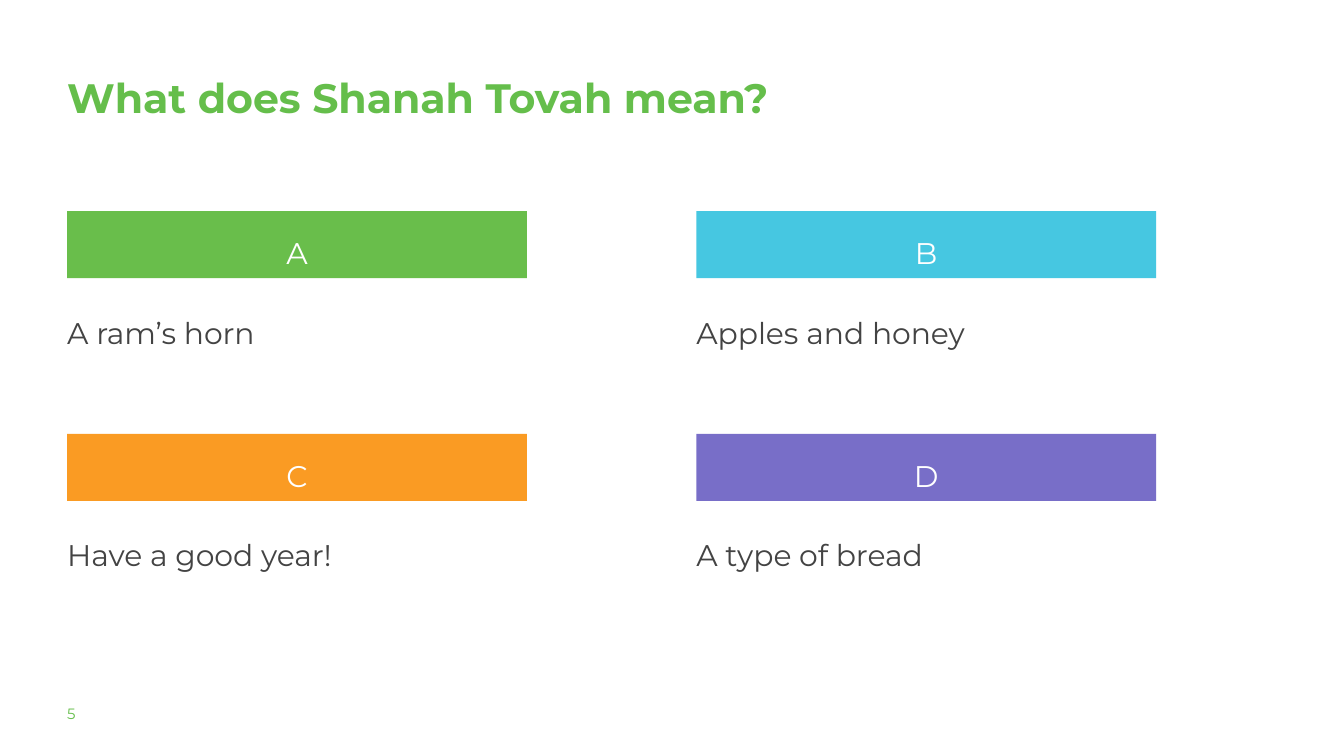
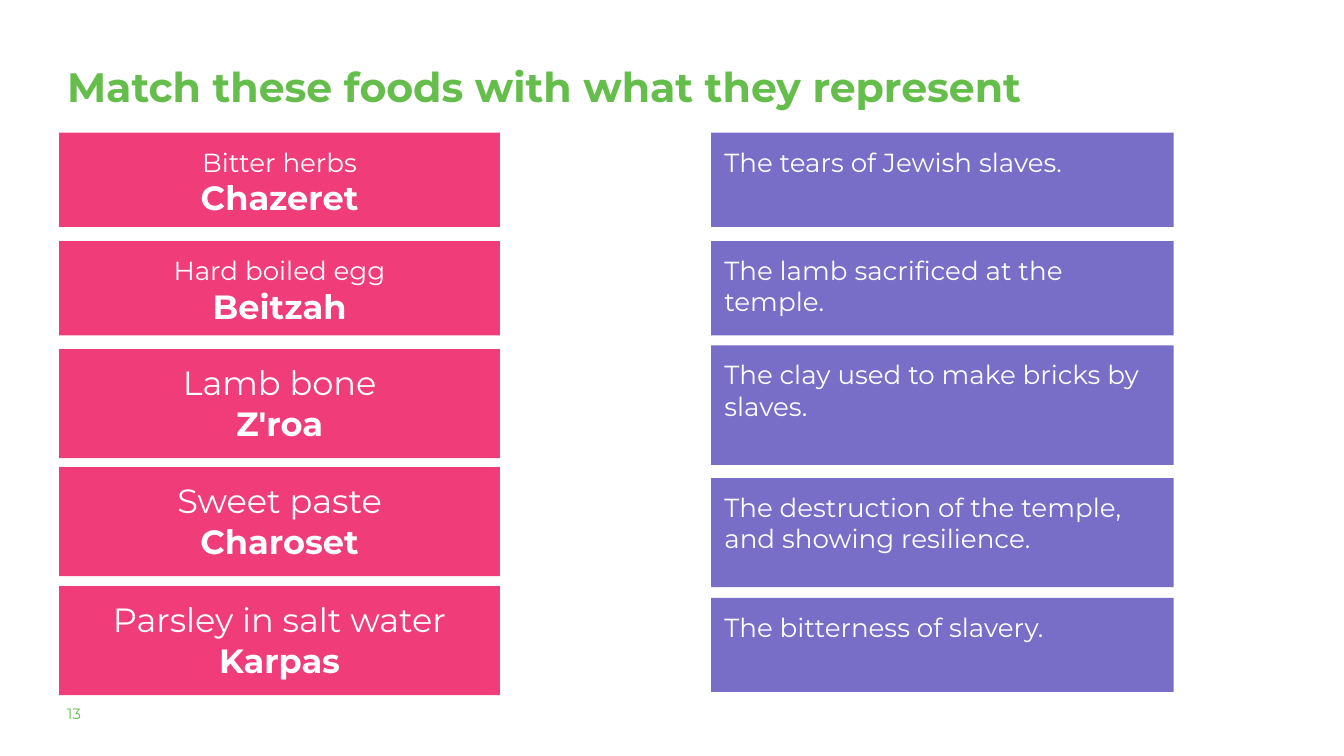
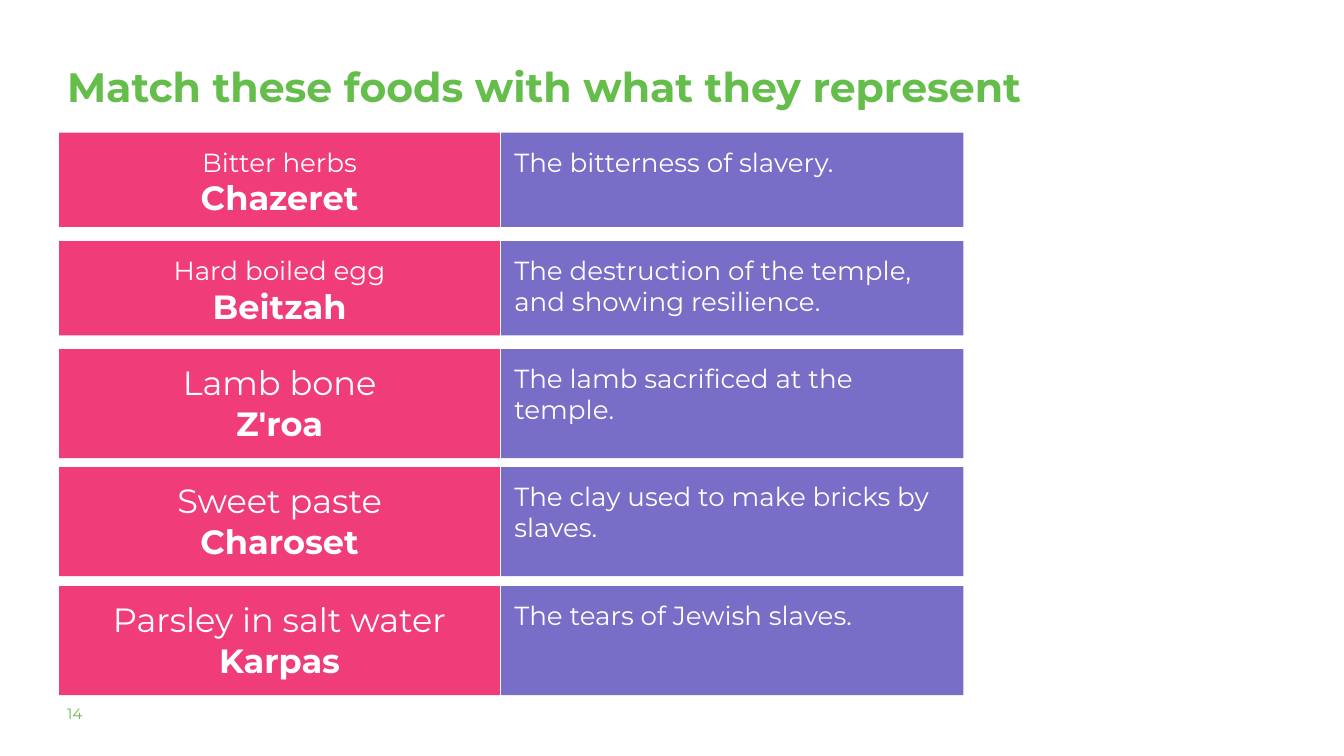
import pptx
import pptx.dml.color
import pptx.enum.shapes
import pptx.enum.text
import pptx.util
from dataclasses import dataclass

Cm = pptx.util.Cm
LEFT = pptx.enum.text.PP_ALIGN.LEFT
CENTER = pptx.enum.text.PP_ALIGN.CENTER


@dataclass(frozen=True)
class Theme:
    font: str = "Montserrat"
    heading: str = "65BE4B"
    body: str = "434343"
    white: str = "FFFFFF"
    green: str = "69BE4B"
    cyan: str = "46C7E1"
    orange: str = "FA9B23"
    purple: str = "786EC8"
    pink: str = "F03C78"
    title_size: int = 22
    food_size: int = 18
    answer_size: int = 16
    small_size: int = 14
    number_size: int = 8
    margin: float = 1.27
    inset: float = 0.25


class SlideBuilder:
    def __init__(self, theme):
        self.theme = theme
        self.deck = pptx.Presentation()
        self.deck.slide_width = Cm(25.4)
        self.deck.slide_height = Cm(14.29)
        self.slide = None

    def new_slide(self, title, title_top, number):
        theme = self.theme
        self.slide = self.deck.slides.add_slide(self.deck.slide_layouts[6])
        self.text((theme.margin, title_top, 22.86, 2.26),
                  [(title, theme.title_size, True)], theme.heading, line_spacing=1.15)
        self.text((theme.margin, 13.31, 2.01, 0.51),
                  [(number, theme.number_size, False)], theme.heading)

    def text(self, place, lines, color, **layout):
        box = self.slide.shapes.add_textbox(*map(Cm, place))
        self.fill_text(box, lines, color, 0, layout)

    def block(self, place, lines, fill, **layout):
        """Add a filled rectangle with white text."""
        box = self.slide.shapes.add_shape(
            pptx.enum.shapes.MSO_SHAPE.RECTANGLE, *map(Cm, place))
        box.shadow.inherit = False
        box.fill.solid()
        box.fill.fore_color.rgb = pptx.dml.color.RGBColor.from_string(fill)
        box.line.fill.background()
        self.fill_text(box, lines, self.theme.white, self.theme.inset, layout)

    def fill_text(self, box, lines, color, inset, layout):
        """Fill a shape with lines of (words, size, bold), one paragraph each."""
        frame = box.text_frame
        frame_format = {"word_wrap": True,
                        "vertical_anchor": pptx.enum.text.MSO_ANCHOR.TOP}
        for side in ("left", "top", "right", "bottom"):
            frame_format[f"margin_{side}"] = Cm(inset)
        set_format(frame, frame_format)
        for index, (words, size, bold) in enumerate(lines):
            para = frame.add_paragraph() if index else frame.paragraphs[0]
            set_format(para, {"alignment": LEFT, **layout})
            span = para.add_run()
            span.text = words
            set_format(span.font, {"name": self.theme.font,
                                   "size": pptx.util.Pt(size), "bold": bold})
            span.font.color.rgb = pptx.dml.color.RGBColor.from_string(color)


def set_format(target, values):
    for name, value in values.items():
        setattr(target, name, value)


THEME = Theme()

ANSWERS = [
    ("A", "A ram’s horn", THEME.green),
    ("B", "Apples and honey", THEME.cyan),
    ("C", "Have a good year!", THEME.orange),
    ("D", "A type of bread", THEME.purple),
]

# Everyday name, Hebrew name, size of the everyday name
FOODS = [
    ("Bitter herbs", "Chazeret", THEME.small_size),
    ("Hard boiled egg", "Beitzah", THEME.small_size),
    ("Lamb bone", "Z'roa", THEME.food_size),
    ("Sweet paste", "Charoset", THEME.food_size),
    ("Parsley in salt water", "Karpas", THEME.food_size),
]

TEARS = "The tears of Jewish slaves."
LAMB = "The lamb sacrificed at the temple."
CLAY = "The clay used to make bricks by slaves."
TEMPLE = "The destruction of the temple, and showing resilience."
BITTERNESS = "The bitterness of slavery."

# Top and height of each row
FOOD_ROWS = [(2.51, 1.78), (4.56, 1.78), (6.6, 2.06), (8.83, 2.06), (11.08, 2.06)]
SHUFFLED_ROWS = [(2.51, 1.78), (4.56, 1.78), (6.53, 2.26), (9.04, 2.06), (11.3, 1.78)]


def build_quiz(builder):
    theme = builder.theme
    builder.new_slide("What does Shanah Tovah mean?", 1.24, "5")
    for index, (letter, answer, color) in enumerate(ANSWERS):
        row, column = divmod(index, 2)
        left = theme.margin + column * 11.89
        top = 3.99 + row * 4.21
        builder.block((left, top, 8.69, 1.27), [(letter, theme.answer_size, False)],
                      color, alignment=CENTER, line_spacing=1.3)
        builder.text((left, top + 1.75, 10.97, 1.75),
                     [(answer, theme.answer_size, False)], theme.body,
                     line_spacing=1.3, space_after=pptx.util.Pt(10))


def build_match(builder, number, meanings, meaning_left, meaning_rows):
    theme = builder.theme
    builder.new_slide("Match these foods with what they represent", 1.02, number)
    for (name, hebrew, size), (top, height) in zip(FOODS, FOOD_ROWS):
        builder.block((1.12, top, 8.33, height),
                      [(name, size, False), (hebrew, theme.food_size, True)],
                      theme.pink, alignment=CENTER)
    for meaning, (top, height) in zip(meanings, meaning_rows):
        builder.block((meaning_left, top, 8.74, height),
                      [(meaning, theme.small_size, False)], theme.purple)


def main():
    builder = SlideBuilder(THEME)
    build_quiz(builder)
    build_match(builder, "13", [TEARS, LAMB, CLAY, TEMPLE, BITTERNESS],
                13.44, SHUFFLED_ROWS)
    build_match(builder, "14", [BITTERNESS, TEMPLE, LAMB, CLAY, TEARS],
                9.47, FOOD_ROWS)
    builder.deck.save("out.pptx")


if __name__ == "__main__":
    main()
